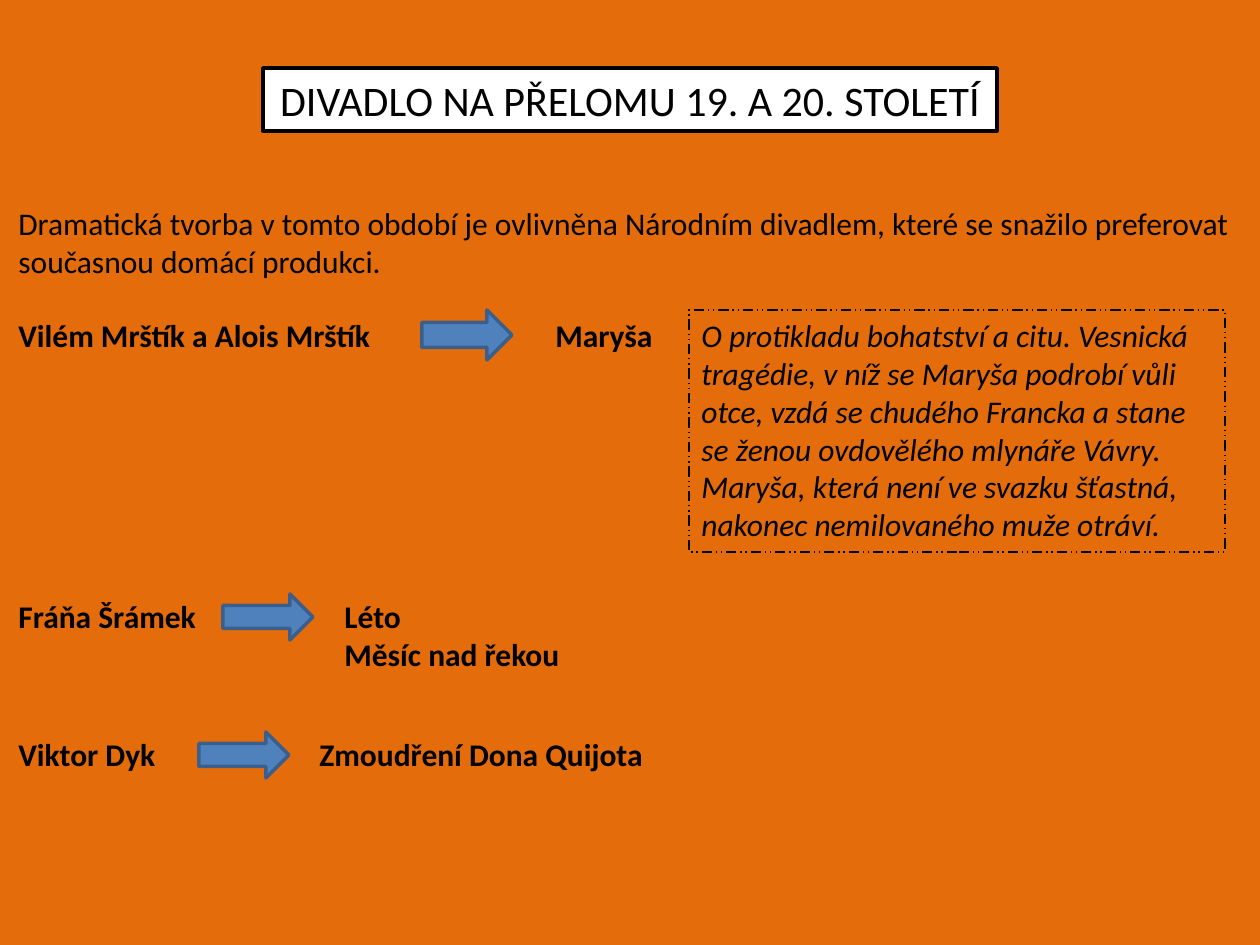
from pptx import Presentation
from pptx.dml.color import RGBColor
from pptx.enum.dml import MSO_LINE
from pptx.enum.shapes import MSO_SHAPE
from pptx.enum.text import MSO_ANCHOR, PP_ALIGN
from pptx.util import Emu, Pt

RECTANGLE, ARROW = MSO_SHAPE.RECTANGLE, MSO_SHAPE.RIGHT_ARROW
LEFT, CENTER = PP_ALIGN.LEFT, PP_ALIGN.CENTER
TOP = MSO_ANCHOR.TOP
DASH_DOT_DOT = MSO_LINE.DASH_DOT_DOT

ORANGE = RGBColor(0xE4, 0x6C, 0x0A)
WHITE = RGBColor(0xFF, 0xFF, 0xFF)
BLACK = RGBColor(0x00, 0x00, 0x00)
BLUE = RGBColor(0x4F, 0x81, 0xBD)
DARK_BLUE = RGBColor(0x3A, 0x5F, 0x8C)

PX = 914400 / 126
MARGIN = 6
ARROW_WIDTH = 90


def add_shape(kind, box, line_color, line_width, fill=None):
    shape = slide.shapes.add_shape(kind, *(Emu(round(n * PX)) for n in box))
    shape.shadow.inherit = False
    if fill is None:
        shape.fill.background()
    else:
        shape.fill.solid()
        shape.fill.fore_color.rgb = fill
    shape.line.color.rgb = line_color
    shape.line.width = Pt(line_width)
    return shape


def write(shape, lines, size=18, bold=False, italic=False, align=LEFT):
    frame = shape.text_frame
    frame.word_wrap = True
    frame.vertical_anchor = TOP
    for index, text in enumerate(lines):
        paragraph = frame.add_paragraph() if index else frame.paragraphs[0]
        paragraph.alignment = align
        run = paragraph.add_run()
        run.text = text
        run.font.name = "Calibri"
        run.font.size = Pt(size)
        run.font.bold = bold
        run.font.italic = italic
        run.font.color.rgb = BLACK


presentation = Presentation()
presentation.slide_width = Emu(round(1260 * PX))
presentation.slide_height = Emu(round(945 * PX))
slide = presentation.slides.add_slide(presentation.slide_layouts[6])
slide.background.fill.solid()
slide.background.fill.fore_color.rgb = ORANGE

# Title
title = add_shape(RECTANGLE, (263, 68, 734, 63), BLACK, 2, WHITE)
write(title, ["DIVADLO NA PŘELOMU 19. A 20. STOLETÍ"], size=24, align=CENTER)

# Introduction, authors and their plays: box, lines, bold
texts = [
    ((MARGIN, 198, 1258, 89),
     ["Dramatická tvorba v tomto období je ovlivněna Národním divadlem, které se snažilo preferovat",
      "současnou domácí produkci."], False),
    ((MARGIN, 310, 381, 50), ["Vilém Mrštík a Alois Mrštík"], True),
    ((543, 310, 126, 50), ["Maryša"], True),
    ((MARGIN, 591, 217, 50), ["Fráňa Šrámek"], True),
    ((332, 591, 242, 89), ["Léto", "Měsíc nad řekou"], True),
    ((MARGIN, 729, 189, 50), ["Viktor Dyk"], True),
    ((307, 729, 352, 50), ["Zmoudření Dona Quijota"], True),
]
for box, lines, bold in texts:
    text_box = slide.shapes.add_textbox(*(Emu(round(n * PX)) for n in box))
    write(text_box, lines, bold=bold)

# Arrows from author to play
for left, top, height in [(422, 310, 50), (223, 594, 46), (199, 732, 46)]:
    add_shape(ARROW, (left, top, ARROW_WIDTH, height), DARK_BLUE, 2, BLUE)

# Plot summary
summary = add_shape(RECTANGLE, (689, 310, 536, 242), BLACK, 0.75)
summary.line.dash_style = DASH_DOT_DOT
write(summary, [
    "O protikladu bohatství a citu. Vesnická tragédie, v níž se Maryša podrobí vůli "
    "otce, vzdá se chudého Francka a stane se ženou ovdovělého mlynáře Vávry. "
    "Maryša, která není ve svazku šťastná, nakonec nemilovaného muže otráví."
], italic=True)

presentation.save("out.pptx")
